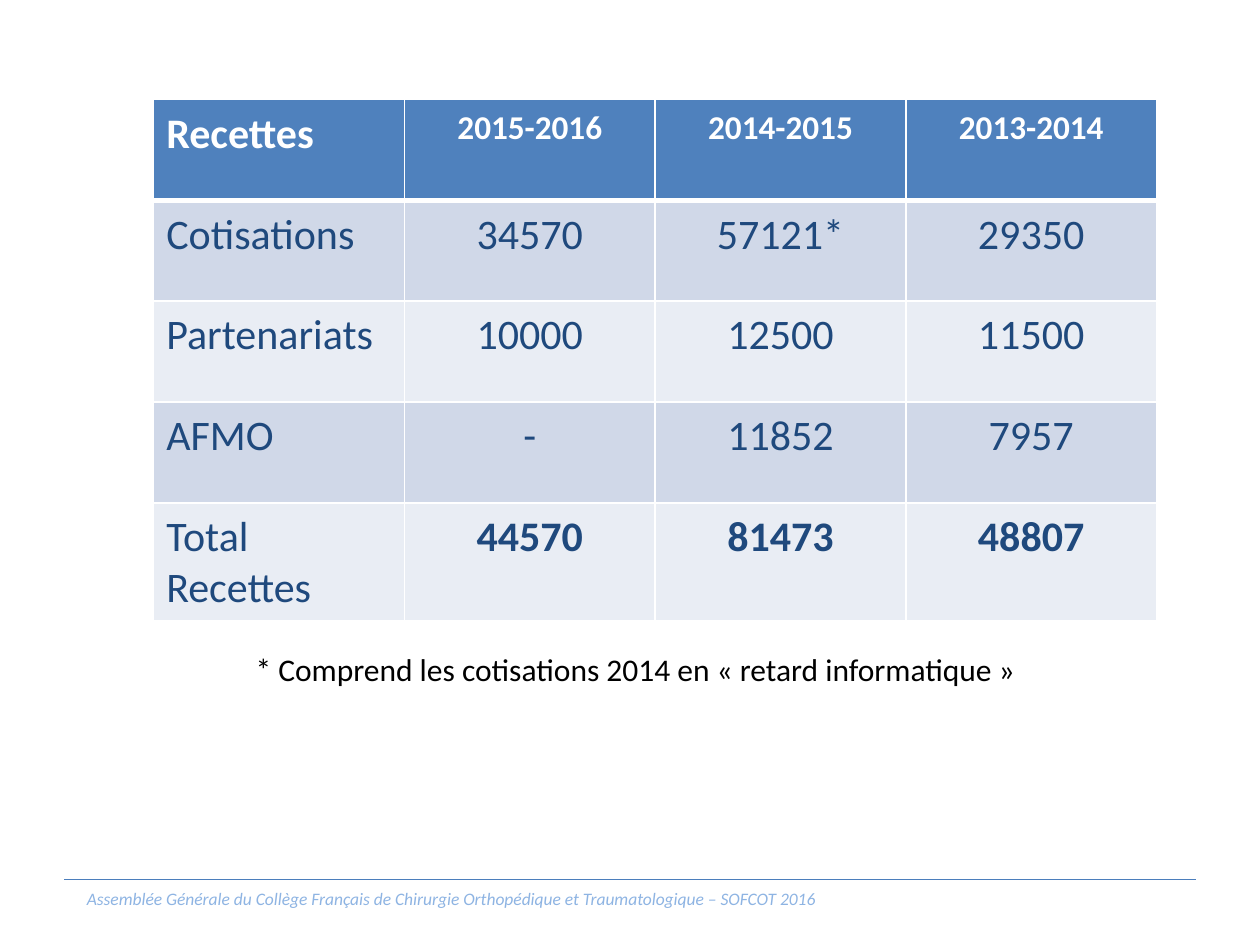
from dataclasses import dataclass

from lxml.etree import SubElement
from pptx import Presentation
from pptx.dml.color import RGBColor as Rgb
from pptx.enum.shapes import MSO_CONNECTOR as Connector
from pptx.enum.text import MSO_AUTO_SIZE as AutoSize, PP_ALIGN as Align
from pptx.oxml.ns import qn
from pptx.util import Inches, Pt


@dataclass(frozen=True)
class Theme:
    font: str = "Calibri"
    header_fill: str = "4F81BD"
    bands: tuple = ("D0D8E8", "E9EDF4")
    white: str = "FFFFFF"
    navy: str = "1F497D"
    black: str = "000000"
    rule: str = "4B7EBC"
    footer: str = "8EB4E3"
    table_size: int = 24
    year_size: int = 19
    note_size: int = 18
    footer_size: int = 10
    grid_width: int = 1
    header_edge: int = 3


class SlideBuilder:
    def __init__(self, slide, theme):
        self.slide = slide
        self.theme = theme

    def add_words(self, frame, text, size, color, align=Align.LEFT, bold=False, italic=False):
        paragraph = frame.paragraphs[0]
        paragraph.alignment = align
        run = paragraph.add_run()
        run.text = text
        font = run.font
        font.name, font.size = self.theme.font, Pt(size)
        font.bold, font.italic = bold, italic
        font.color.rgb = Rgb.from_string(color)

    def text(self, text, left, top, width, height, size, color, wrap=True, **style):
        box = self.slide.shapes.add_textbox(
            Inches(left), Inches(top), Inches(width), Inches(height))
        frame = box.text_frame
        frame.word_wrap = wrap
        frame.auto_size = AutoSize.SHAPE_TO_FIT_TEXT
        self.add_words(frame, text, size, color, **style)

    def rule(self, left, right, y):
        line = self.slide.shapes.add_connector(
            Connector.STRAIGHT, Inches(left), Inches(y), Inches(right), Inches(y))
        line.line.color.rgb = Rgb.from_string(self.theme.rule)
        line.line.width = Pt(0.75)
        SubElement(line._element.spPr, qn("a:effectLst"))

    def borders(self, cell, top, bottom):
        properties = cell._tc.get_or_add_tcPr()
        grid = self.theme.grid_width
        for side, width in (("L", grid), ("R", grid), ("T", top), ("B", bottom)):
            edge = SubElement(properties, qn(f"a:ln{side}"), w=str(Pt(width)))
            fill = SubElement(edge, qn("a:solidFill"))
            SubElement(fill, qn("a:srgbClr"), val=self.theme.white)

    def table(self, rows, left, top, column_width, row_height):
        theme = self.theme
        count = len(rows[0])
        table = self.slide.shapes.add_table(
            len(rows), count, Inches(left), Inches(top),
            Inches(column_width * count), Inches(row_height * len(rows))).table
        for column in table.columns:
            column.width = Inches(column_width)
        for r, values in enumerate(rows):
            table.rows[r].height = Inches(row_height)
            header, total = r == 0, r == len(rows) - 1
            background = theme.header_fill if header else theme.bands[(r - 1) % 2]
            for c, value in enumerate(values):
                cell = table.cell(r, c)
                cell.margin_left = cell.margin_right = Inches(0.1)
                cell.margin_top = cell.margin_bottom = Inches(0.07)
                self.borders(
                    cell,
                    theme.header_edge if r == 1 else theme.grid_width,
                    theme.header_edge if header else theme.grid_width)
                cell.fill.solid()
                cell.fill.fore_color.rgb = Rgb.from_string(background)
                self.add_words(
                    cell.text_frame, value,
                    theme.year_size if header and c else theme.table_size,
                    theme.white if header else theme.navy,
                    align=Align.CENTER if c else Align.LEFT,
                    bold=header or (total and c > 0))


def main():
    deck = Presentation()
    deck.slide_width, deck.slide_height = Inches(10), Inches(7.5)
    theme = Theme()
    page = SlideBuilder(deck.slides.add_slide(deck.slide_layouts[6]), theme)

    page.rule(0.51, 9.49, 6.98)
    page.text(
        "Assemblée Générale du Collège Français de Chirurgie Orthopédique et "
        "Traumatologique – SOFCOT 2016",
        0.51, 7, 6.14, 0.27, theme.footer_size, theme.footer,
        align=Align.CENTER, italic=True)

    receipts = [
        ("Recettes", "2015-2016", "2014-2015", "2013-2014"),
        ("Cotisations", "34570", "57121*", "29350"),
        ("Partenariats", "10000", "12500", "11500"),
        ("AFMO", "-", "11852", "7957"),
        ("Total Recettes", "44570", "81473", "48807"),
    ]
    page.table(receipts, 1.22, 0.79, 1.99, 0.8)
    page.text(
        "* Comprend les cotisations 2014 en « retard informatique »",
        1.93, 5.11, 6.32, 0.4, theme.note_size, theme.black, wrap=False)

    deck.save("out.pptx")


if __name__ == "__main__":
    main()
